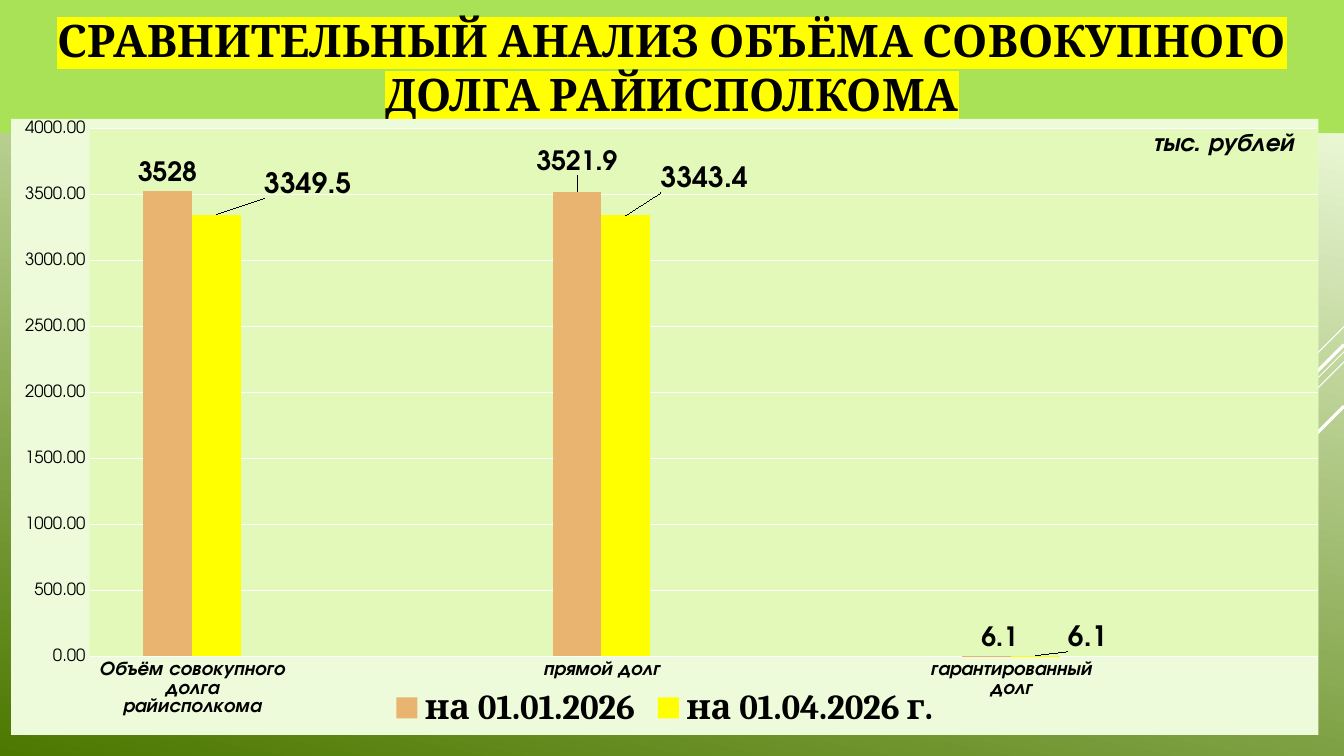
from lxml import etree
from pptx import Presentation
from pptx.chart.data import CategoryChartData
from pptx.dml.color import RGBColor
from pptx.enum.chart import (XL_CHART_TYPE, XL_LABEL_POSITION,
                             XL_LEGEND_POSITION, XL_TICK_MARK)
from pptx.enum.shapes import MSO_CONNECTOR, MSO_SHAPE
from pptx.enum.text import MSO_ANCHOR, PP_ALIGN
from pptx.oxml import parse_xml
from pptx.oxml.ns import nsdecls, qn
from pptx.util import Inches, Pt

COLUMN = XL_CHART_TYPE.COLUMN_CLUSTERED
OUTSIDE = XL_LABEL_POSITION.OUTSIDE_END
BOTTOM = XL_LEGEND_POSITION.BOTTOM
NO_TICK = XL_TICK_MARK.NONE
STRAIGHT = MSO_CONNECTOR.STRAIGHT
RECT = MSO_SHAPE.RECTANGLE
MIDDLE = MSO_ANCHOR.MIDDLE
CENTER = PP_ALIGN.CENTER

COLORS = {"pale": "EEFBDA", "dark": "4C7800", "band": "A9E257",
          "plot": "E2F9BA", "white": "FFFFFF", "black": "000000",
          "mark": "FFFF00", "sand": "E9B470"}
SERIF, SANS = "Cambria", "TeX Gyre Adventor"

# Right end height, horizontal run and width of each 45-degree ray
RAYS = [(3.24, 1, 0.75), (3.49, 3.26, 0.75), (3.59, 2.07, 0.75),
        (3.42, 1.91, 2.25), (4.03, 1.39, 2.25)]

CATS = ["Объём совокупного долга райисполкома", "", "прямой долг", "",
        "гарантированный долг", ""]
# Name, colour, label size, values, label shifts by point
SERIES = [
    ("на 01.01.2026", "sand", 19, (3528, None, 3521.9, None, 6.1, None),
     {0: (0, 0), 2: (0, -0.02), 4: (0.01, 0)}),
    ("на 01.04.2026 г.", "mark", 20, (3349.5, None, 3343.4, None, 6.1, None),
     {0: (0.07, -0.02), 2: (0.06, -0.03), 4: (0.04, 0)}),
]


def color(name):
    return RGBColor.from_string(COLORS[name])


def style(font, size, face=SANS, bold=False, italic=False):
    font.size, font.name = Pt(size), face
    font.bold, font.italic = bold, italic
    font.color.rgb = color("black")


def place(parent, index, **parts):
    """Give a chart part a manual layout."""
    for old in parent.findall(qn("c:layout")):
        parent.remove(old)
    body = "".join(f'<c:{key} val="{val}"/>' for key, val in parts.items())
    parent.insert(index, parse_xml(
        f'<c:layout {nsdecls("c")}><c:manualLayout>{body}'
        '</c:manualLayout></c:layout>'))


def area(name):
    return parse_xml(
        f'<c:spPr {nsdecls("c", "a")}><a:solidFill><a:srgbClr '
        f'val="{COLORS[name]}"/></a:solidFill><a:ln><a:noFill/></a:ln></c:spPr>')


def paint(slide):
    fill = slide.background.fill
    fill.gradient()
    fill.gradient_angle = 258
    for stop, (pos, name) in zip(fill.gradient_stops,
                                 [(0.1, "pale"), (1, "dark")]):
        stop.position = pos
        stop.color.rgb = color(name)


def add_ray(slide, top, run, width):
    ray = slide.shapes.add_connector(
        STRAIGHT, Inches(13.33), Inches(top),
        Inches(13.33 - run), Inches(top + run))
    ray.line.color.rgb = color("white")
    ray.line.width = Pt(width)
    etree.SubElement(ray._element.spPr, qn("a:effectLst"))


def add_head(slide, text):
    box = slide.shapes.add_shape(RECT, 0, 0, Inches(13.33), Inches(1.32))
    box.shadow.inherit = False
    box.fill.solid()
    box.fill.fore_color.rgb = color("band")
    box.line.fill.background()
    frame = box.text_frame
    frame.word_wrap = True
    frame.vertical_anchor = MIDDLE
    para = frame.paragraphs[0]
    para.alignment = CENTER
    run = para.add_run()
    run.text = text
    style(run.font, 32, SERIF, bold=True)
    # Highlight follows the fill of the run
    run._r.rPr.find(qn("a:solidFill")).addnext(parse_xml(
        f'<a:highlight {nsdecls("a")}><a:srgbClr val="{COLORS["mark"]}"/>'
        '</a:highlight>'))


def add_bars(slide):
    data = CategoryChartData(number_format="General")
    data.categories = CATS
    for name, _, _, vals, _ in SERIES:
        data.add_series(name, vals)
    chart = slide.shapes.add_chart(
        COLUMN, Inches(0.11), Inches(1.18), Inches(12.97), Inches(6.11),
        data).chart
    style(chart.font, 10)
    return chart


def style_bars(chart):
    plot = chart.plots[0]
    plot.gap_width, plot.overlap = 219, 0
    plot.vary_by_categories = False
    for series, (_, fill, size, _, shifts) in zip(plot.series, SERIES):
        series.format.fill.solid()
        series.format.fill.fore_color.rgb = color(fill)
        series.invert_if_negative = False
        labels = series.data_labels
        labels.show_value = True
        labels.position = OUTSIDE
        style(labels.font, size, bold=True)
        for idx in shifts:
            label = series.points[idx].data_label
            style(label.font, size, bold=True)
            label.position = OUTSIDE
        nodes = series._element.iter(qn("c:dLbl"))
        for node, (x, y) in zip(nodes, shifts.values()):
            place(node, 1, x=x, y=y)


def style_axes(chart):
    cat, val = chart.category_axis, chart.value_axis
    for axis in (cat, val):
        axis.major_tick_mark = axis.minor_tick_mark = NO_TICK
    style(cat.tick_labels.font, 14, bold=True, italic=True)
    style(val.tick_labels.font, 12)
    val.minimum_scale, val.maximum_scale, val.major_unit = 0, 4000, 500
    val.tick_labels.number_format = "0.00"
    val.tick_labels.number_format_is_linked = False
    val.format.line.fill.background()
    for line in (cat.format.line, val.major_gridlines.format.line):
        line.color.rgb = color("white")
        line.width = Pt(0.75)


def style_frame(chart):
    # Unit caption
    title = chart.chart_title
    run = title.text_frame.paragraphs[0].add_run()
    run.text = "тыс. рублей"
    style(run.font, 18, bold=True, italic=True)
    title.include_in_layout = True
    place(title._element, 1, xMode="edge", yMode="edge", x=0.87, y=0.01)

    # Legend
    chart.has_legend = True
    chart.legend.position = BOTTOM
    chart.legend.include_in_layout = False
    style(chart.legend.font, 25, SERIF, bold=True)

    # Plot area and backgrounds
    space = chart._chartSpace
    inner = space.chart.plotArea
    place(inner, 0, layoutTarget="inner", xMode="edge", yMode="edge",
          x=0.06, y=0.016, w=0.94, h=0.857)
    inner.append(area("plot"))
    space.chart.addnext(area("pale"))


def main():
    deck = Presentation()
    deck.slide_width, deck.slide_height = Inches(13.33), Inches(7.5)
    slide = deck.slides.add_slide(deck.slide_layouts[6])
    paint(slide)
    for ray in RAYS:
        add_ray(slide, *ray)
    add_head(slide, "СРАВНИТЕЛЬНЫЙ АНАЛИЗ ОБЪЁМА СОВОКУПНОГО ДОЛГА РАЙИСПОЛКОМА")
    chart = add_bars(slide)
    style_bars(chart)
    style_axes(chart)
    style_frame(chart)
    deck.save("out.pptx")


if __name__ == "__main__":
    main()
